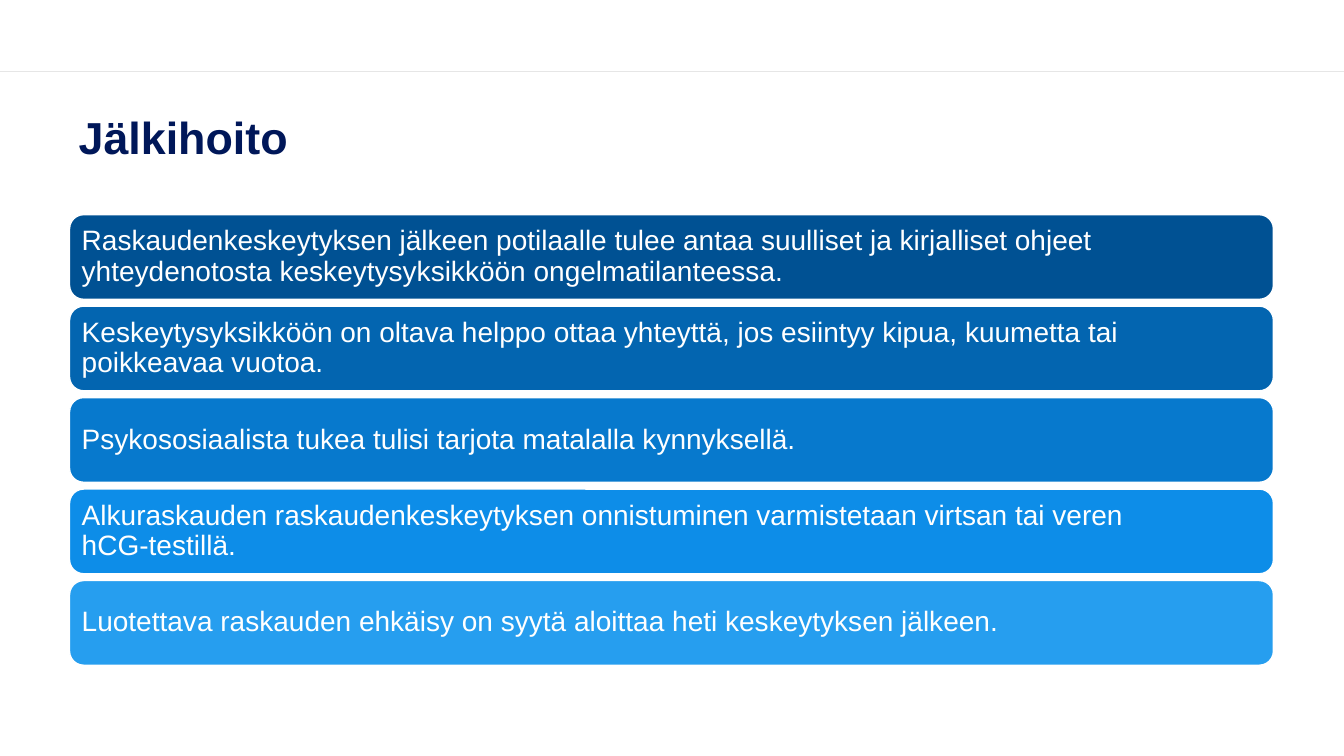
from dataclasses import dataclass

from pptx import Presentation
from pptx.dml.color import RGBColor as Rgb
from pptx.enum.shapes import MSO_CONNECTOR as Conn, MSO_SHAPE as Shape
from pptx.enum.text import MSO_ANCHOR as Anchor, PP_ALIGN as Align
from pptx.oxml.ns import qn
from pptx.util import Inches, Pt


@dataclass
class Theme:
    font: str = "Arial"
    head: int = 32
    body: int = 20
    navy: str = "001759"
    white: str = "FFFFFF"
    rule: str = "E6E6E6"
    blues: tuple = ("005193", "0365B0", "0779CD", "0D8DE8", "269EEF")


class Page:
    def __init__(self, deck, theme):
        self.theme = theme
        self.slide = deck.slides.add_slide(deck.slide_layouts[5])

    def label(self, frame, text, size, color, bold=False):
        frame.text = text
        frame.word_wrap = True
        frame.vertical_anchor = Anchor.MIDDLE
        para = frame.paragraphs[0]
        para.alignment = Align.LEFT
        para.line_spacing = 0.9
        for run in para.runs:
            run.font.name = self.theme.font
            run.font.size = Pt(size)
            run.font.bold = bold
            run.font.color.rgb = Rgb.from_string(color)

    def title(self, text, left, top, width, height):
        box = self.slide.shapes.title
        box.left, box.top = Inches(left), Inches(top)
        box.width, box.height = Inches(width), Inches(height)
        self.label(box.text_frame, text, self.theme.head, self.theme.navy, True)

    def rule(self, top, width):
        line = self.slide.shapes.add_connector(
            Conn.STRAIGHT, 0, Inches(top), Inches(width), Inches(top))
        line.line.color.rgb = Rgb.from_string(self.theme.rule)
        line.line.width = Pt(1)
        props = line._element.spPr
        props.append(props.makeelement(qn("a:effectLst"), {}))

    def bar(self, text, fill, left, top, width, height):
        bar = self.slide.shapes.add_shape(
            Shape.ROUNDED_RECTANGLE, Inches(left), Inches(top),
            Inches(width), Inches(height))
        bar.shadow.inherit = False
        bar.fill.solid()
        bar.fill.fore_color.rgb = Rgb.from_string(fill)
        bar.line.color.rgb = Rgb.from_string(self.theme.white)
        bar.line.width = Pt(1)
        frame = bar.text_frame
        frame.margin_left = frame.margin_top = frame.margin_bottom = Inches(0.08)
        frame.margin_right = Inches(0.1)
        self.label(frame, text, self.theme.body, self.theme.white)


def main():
    deck = Presentation()
    deck.slide_width, deck.slide_height = Inches(13.33), Inches(7.5)
    theme = Theme()
    page = Page(deck, theme)

    # Header
    page.rule(0.71, 13.33)
    page.title("Jälkihoito", 0.68, 0.93, 11.94, 0.91)

    # Stack of evenly spaced bars
    texts = (
        "Raskaudenkeskeytyksen jälkeen potilaalle tulee antaa suulliset ja "
        "kirjalliset ohjeet yhteydenotosta keskeytysyksikköön ongelmatilanteessa.",
        "Keskeytysyksikköön on oltava helppo ottaa yhteyttä, jos esiintyy "
        "kipua, kuumetta tai poikkeavaa vuotoa.",
        "Psykososiaalista tukea tulisi tarjota matalalla kynnyksellä.",
        "Alkuraskauden raskaudenkeskeytyksen onnistuminen varmistetaan "
        "virtsan tai veren\vhCG-testillä.",
        "Luotettava raskauden ehkäisy on syytä aloittaa heti keskeytyksen "
        "jälkeen.",
    )
    first, last = 2.13, 5.76
    step = (last - first) / (len(texts) - 1)
    for i, (text, fill) in enumerate(zip(texts, theme.blues)):
        page.bar(text, fill, 0.69, first + i * step, 11.94, 0.84)

    deck.save("out.pptx")


if __name__ == "__main__":
    main()
